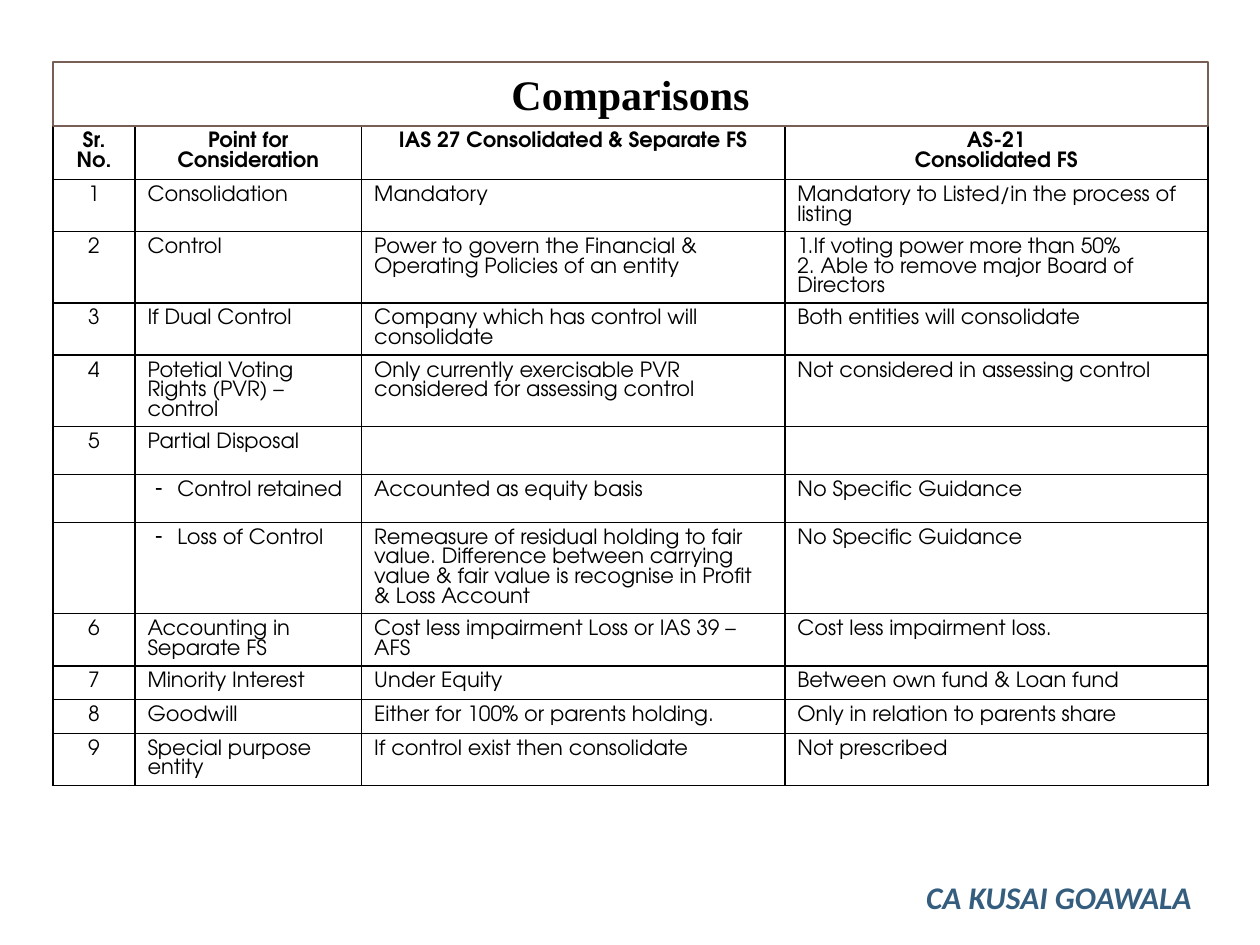
"""Build the slide comparing IAS 27 with AS-21."""
from lxml import etree
from pptx import Presentation
from pptx.dml.color import RGBColor
from pptx.enum.text import MSO_ANCHOR, MSO_AUTO_SIZE, PP_ALIGN
from pptx.oxml.ns import qn
from pptx.util import Cm, Pt

CENTER, LEFT = PP_ALIGN.CENTER, PP_ALIGN.LEFT
MIDDLE, NO_FIT = MSO_ANCHOR.MIDDLE, MSO_AUTO_SIZE.NONE

COLORS = {"text": "000000", "rule": "000000", "frame": "775F55", "author": "355D7E"}
TITLE = "Comparisons"
AUTHOR = "CA KUSAI GOAWALA"
DASH = "- "
COLUMN_WIDTHS = [1.65, 4.57, 8.53, 8.53]
ROWS = [
    (1.08, "Sr. No.", "Point for Consideration", "IAS 27 Consolidated & Separate FS",
     "AS-21\nConsolidated FS"),
    (1.05, "1", "Consolidation", "Mandatory", "Mandatory to Listed/in the process of listing"),
    (1.44, "2", "Control", "Power to govern the Financial & Operating Policies of an entity",
     "1.If voting power more than 50%\n2. Able to remove major Board of Directors"),
    (1.05, "3", "If Dual Control", "Company which has control will consolidate",
     "Both entities will consolidate"),
    (1.44, "4", "Potetial Voting Rights (PVR) – control",
     "Only currently exercisable PVR considered for assessing control",
     "Not considered in assessing control"),
    (0.73, "5", "Partial Disposal", "", ""),
    (0.73, "", "- Control retained", "Accounted as equity basis", "No Specific Guidance"),
    (1.84, "", "- Loss of Control",
     "Remeasure of residual holding to fair value. Difference between carrying value"
     " & fair value is recognise in Profit & Loss Account", "No Specific Guidance"),
    (1.05, "6", "Accounting in Separate FS", "Cost less impairment Loss or IAS 39 – AFS",
     "Cost less impairment loss."),
    (0.68, "7", "Minority Interest", "Under Equity", "Between own fund & Loan fund"),
    (0.68, "8", "Goodwill", "Either for 100% or parents holding.",
     "Only in relation to parents share"),
    (1.05, "9", "Special purpose entity", "If control exist then consolidate", "Not prescribed"),
]
TITLE_FONT = {"name": "Times New Roman", "size": Pt(24), "bold": True}
HEADER_FONT = {"name": "TeX Gyre Adventor", "size": Pt(12), "bold": True}
BODY_FONT = {**HEADER_FONT, "bold": False}
AUTHOR_FONT = {"name": "Calibri", "size": Pt(18), "bold": True, "italic": True}
PLAIN_TABLE = {"first_row": False, "horz_banding": False}
LEFT_EDGE, TITLE_TOP, TABLE_TOP = 1.07, 1.25, 2.54
TABLE_WIDTH = sum(COLUMN_WIDTHS)


def apply(target, values):
    for key, value in values.items():
        setattr(target, key, value)


def write(paragraph, text, font, color, **layout):
    apply(paragraph, layout)
    run = paragraph.add_run()
    run.text = text
    apply(run.font, font)
    run.font.color.rgb = RGBColor.from_string(COLORS[color])


def add_dash(paragraph):
    properties = paragraph._p.get_or_add_pPr()
    properties.set("marL", str(Cm(0.6)))
    properties.set("indent", str(Cm(-0.44)))
    etree.SubElement(properties, qn("a:buChar"), char=DASH.strip())


def draw_borders(cell):
    properties = cell._tc.get_or_add_tcPr()
    for position, side in enumerate("LRTB"):
        border = etree.Element(qn(f"a:ln{side}"), w=str(Pt(1)))
        fill = etree.SubElement(border, qn("a:solidFill"))
        etree.SubElement(fill, qn("a:srgbClr"), val=COLORS["rule"])
        properties.insert(position, border)


def fill_cell(cell, text, font, alignment):
    cell.fill.background()
    draw_borders(cell)
    for index, line in enumerate(text.split("\n")):
        frame = cell.text_frame
        paragraph = frame.add_paragraph() if index else frame.paragraphs[0]
        write(paragraph, line.removeprefix(DASH), font, "text",
              alignment=alignment, line_spacing=Pt(11.2))
        if line.startswith(DASH):
            add_dash(paragraph)


def add_comparison(slide):
    height = sum(row[0] for row in ROWS)
    table = slide.shapes.add_table(len(ROWS), len(COLUMN_WIDTHS), Cm(LEFT_EDGE),
                                   Cm(TABLE_TOP), Cm(TABLE_WIDTH), Cm(height)).table
    apply(table, PLAIN_TABLE)
    for column, width in zip(table.columns, COLUMN_WIDTHS):
        column.width = Cm(width)
    for r, (row_height, *texts) in enumerate(ROWS):
        table.rows[r].height = Cm(row_height)
        for c, text in enumerate(texts):
            fill_cell(table.cell(r, c), text, BODY_FONT if r else HEADER_FONT,
                      CENTER if r == 0 or c == 0 else LEFT)


def add_title(slide):
    title = slide.shapes.title
    apply(title, {"left": Cm(LEFT_EDGE), "top": Cm(TITLE_TOP),
                  "width": Cm(TABLE_WIDTH), "height": Cm(TABLE_TOP - TITLE_TOP)})
    apply(title.text_frame, {"auto_size": NO_FIT, "vertical_anchor": MIDDLE, "word_wrap": True})
    title.line.color.rgb = RGBColor.from_string(COLORS["frame"])
    title.line.width = Pt(0.75)
    write(title.text_frame.paragraphs[0], TITLE, TITLE_FONT, "text", alignment=CENTER)
    slide.shapes._spTree.append(title._element)


def add_author(slide):
    author = slide.shapes.add_textbox(Cm(18.42), Cm(17.58), Cm(6.55), Cm(1.02))
    author.text_frame.word_wrap = True
    write(author.text_frame.paragraphs[0], AUTHOR, AUTHOR_FONT, "author")


def main():
    deck = Presentation()
    apply(deck, {"slide_width": Cm(25.4), "slide_height": Cm(19.05)})
    slide = deck.slides.add_slide(deck.slide_layouts.get_by_name("Title Only"))
    add_comparison(slide)
    add_title(slide)
    add_author(slide)
    deck.save("out.pptx")


if __name__ == "__main__":
    main()
